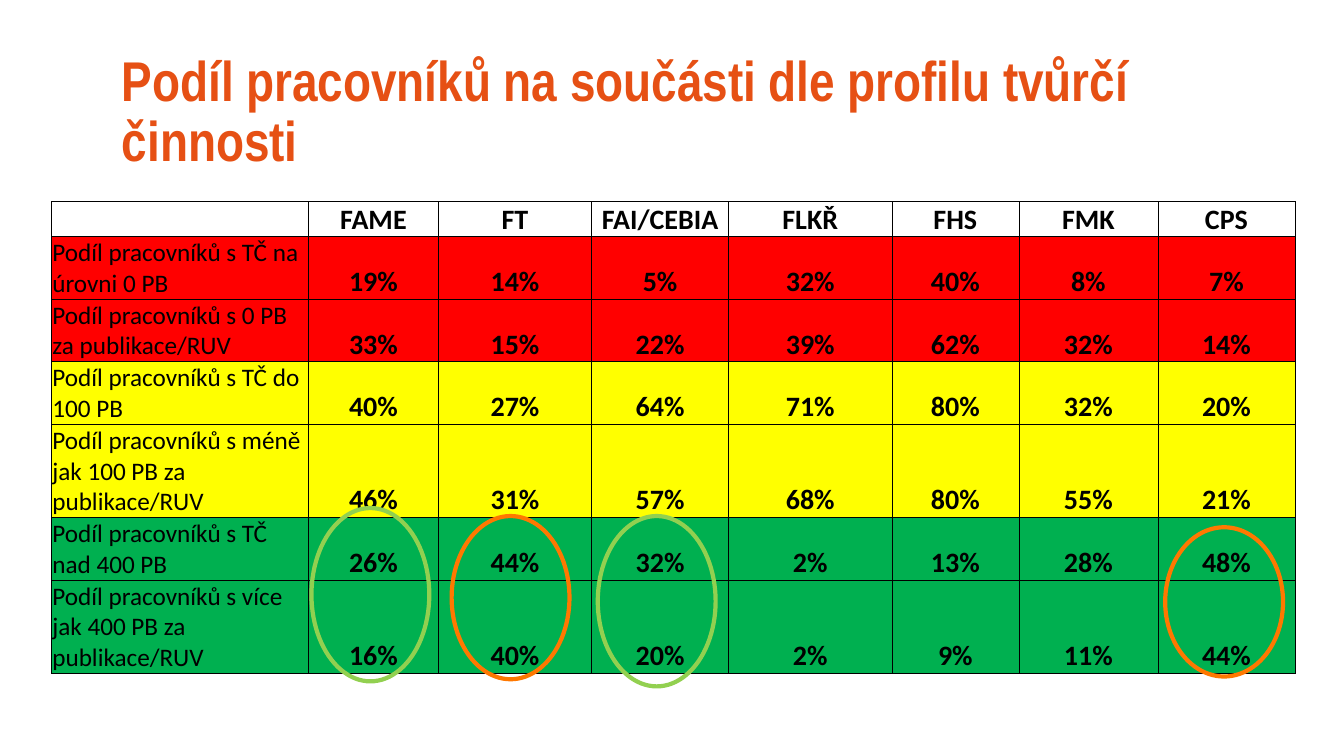
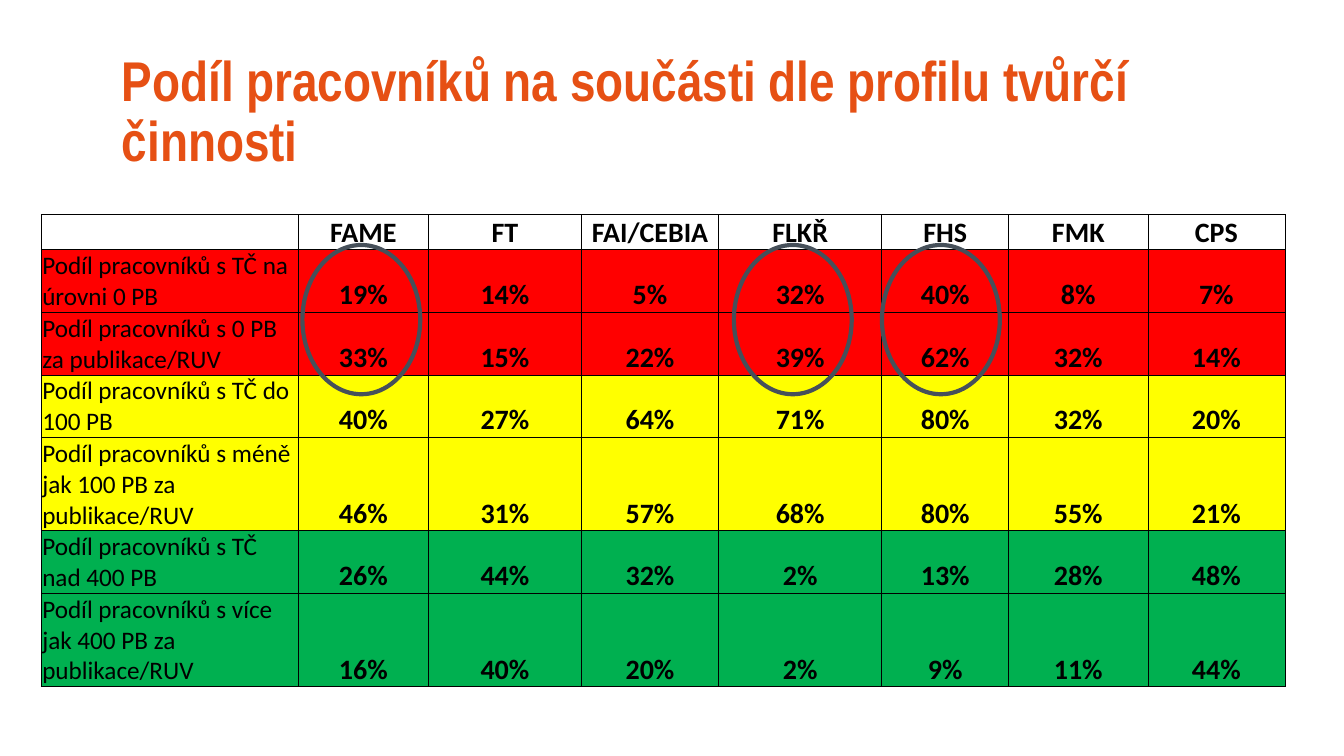
from lxml import etree
from pptx import Presentation
from pptx.dml.color import RGBColor
from pptx.enum.shapes import MSO_SHAPE
from pptx.enum.text import MSO_ANCHOR, PP_ALIGN
from pptx.oxml import parse_xml
from pptx.oxml.ns import nsdecls
from pptx.util import Pt

OVAL = MSO_SHAPE.OVAL
MIDDLE, BOTTOM = MSO_ANCHOR.MIDDLE, MSO_ANCHOR.BOTTOM
LEFT, CENTER = PP_ALIGN.LEFT, PP_ALIGN.CENTER

COLORS = {
    "title": "E65014",
    "text": "000000",
    "border": "000000",
    "red": "FF0000",
    "yellow": "FFFF00",
    "green": "00B050",
    "orange": "FF7800",
    "lime": "92D050",
    "slate": "46505A",
}

TITLE = "Podíl pracovníků na součásti dle profilu tvůrčí činnosti"
TITLE_FONT = {"name": "Arial Narrow", "size": Pt(40), "bold": True}
LABEL_FONT = {"name": "Calibri", "size": Pt(18), "bold": False}
VALUE_FONT = {"name": "Calibri", "size": Pt(20), "bold": True}
CELL_FORMAT = {
    "vertical_anchor": BOTTOM,
    "margin_left": Pt(0.7),
    "margin_top": Pt(0.7),
    "margin_right": Pt(0.7),
    "margin_bottom": Pt(0),
}

COLUMN_WIDTHS = [183.6, 92.9, 109.4, 97.9, 116.6, 90.7, 99.4, 97.9]
HEADER = ["", "FAME", "FT", "FAI/CEBIA", "FLKŘ", "FHS", "FMK", "CPS"]
# Row height, fill colour, cell texts
ROWS = [
    (25, None, HEADER),
    (44.7, "red", ["Podíl pracovníků s TČ na úrovni 0 PB",
                   "19%", "14%", "5%", "32%", "40%", "8%", "7%"]),
    (44.7, "red", ["Podíl pracovníků s 0 PB za publikace/RUV",
                   "33%", "15%", "22%", "39%", "62%", "32%", "14%"]),
    (44.7, "yellow", ["Podíl pracovníků s TČ do 100 PB",
                      "40%", "27%", "64%", "71%", "80%", "32%", "20%"]),
    (66.7, "yellow", ["Podíl pracovníků s méně jak 100 PB za publikace/RUV",
                      "46%", "31%", "57%", "68%", "80%", "55%", "21%"]),
    (44.7, "green", ["Podíl pracovníků s TČ nad 400 PB",
                     "26%", "44%", "32%", "2%", "13%", "28%", "48%"]),
    (66.7, "green", ["Podíl pracovníků s více jak 400 PB za publikace/RUV",
                     "16%", "40%", "20%", "2%", "9%", "11%", "44%"]),
]

RING_WIDTH = 84.2
# Table position, then rings as left, top, height, colour
SLIDES = [
    ((36.7, 144), [
        (322.6, 368.6, 116.6, "orange"),
        (222.5, 362.9, 123.8, "lime"),
        (427, 368.6, 121.7, "lime"),
        (832.3, 376.6, 106.6, "orange"),
    ]),
    ((29.5, 153.4), [(left, 175, 106.6, "slate") for left in (216, 524.2, 630)]),
]


def write(paragraph, text, font_format, color, alignment):
    paragraph.alignment = alignment
    run = paragraph.add_run()
    run.text = text
    for name, value in font_format.items():
        setattr(run.font, name, value)
    run.font.color.rgb = RGBColor.from_string(COLORS[color])


def add_borders(cell):
    properties = cell._tc.get_or_add_tcPr()
    for side in ("lnL", "lnR", "lnT", "lnB"):
        line = parse_xml(f'<a:{side} {nsdecls("a")} w="{Pt(0.5)}"/>')
        fill = etree.SubElement(line, line.tag.replace(side, "solidFill"))
        color = etree.SubElement(fill, line.tag.replace(side, "srgbClr"))
        color.set("val", COLORS["border"])
        properties.append(line)


presentation = Presentation()
presentation.slide_width = Pt(960)
presentation.slide_height = Pt(540)
blank_layout = presentation.slide_layouts[6]

for (table_left, table_top), rings in SLIDES:
    slide = presentation.slides.add_slide(blank_layout)

    title = slide.shapes.add_textbox(Pt(79.9), Pt(28.8), Pt(814.3), Pt(104.4))
    title.text_frame.word_wrap = True
    title.text_frame.vertical_anchor = MIDDLE
    title_paragraph = title.text_frame.paragraphs[0]
    title_paragraph.line_spacing = 0.9
    write(title_paragraph, TITLE, TITLE_FONT, "title", LEFT)

    table = slide.shapes.add_table(
        len(ROWS), len(COLUMN_WIDTHS), Pt(table_left), Pt(table_top),
        Pt(sum(COLUMN_WIDTHS)), Pt(sum(height for height, _, _ in ROWS))).table
    table.first_row = table.horz_banding = False
    for column, width in zip(table.columns, COLUMN_WIDTHS):
        column.width = Pt(width)

    for row, (height, fill_color, texts) in zip(table.rows, ROWS):
        row.height = Pt(height)
        for index, (cell, text) in enumerate(zip(row.cells, texts)):
            for name, value in CELL_FORMAT.items():
                setattr(cell, name, value)
            add_borders(cell)
            if fill_color:
                cell.fill.solid()
                cell.fill.fore_color.rgb = RGBColor.from_string(COLORS[fill_color])
            else:
                cell.fill.background()
            if text:
                font_format, alignment = (VALUE_FONT, CENTER) if index else (LABEL_FONT, LEFT)
                write(cell.text_frame.paragraphs[0], text, font_format, "text", alignment)

    for left, top, height, color in rings:
        ring = slide.shapes.add_shape(OVAL, Pt(left), Pt(top), Pt(RING_WIDTH), Pt(height))
        ring.shadow.inherit = False
        ring.fill.background()
        ring.line.color.rgb = RGBColor.from_string(COLORS[color])
        ring.line.width = Pt(3)

presentation.save("out.pptx")
